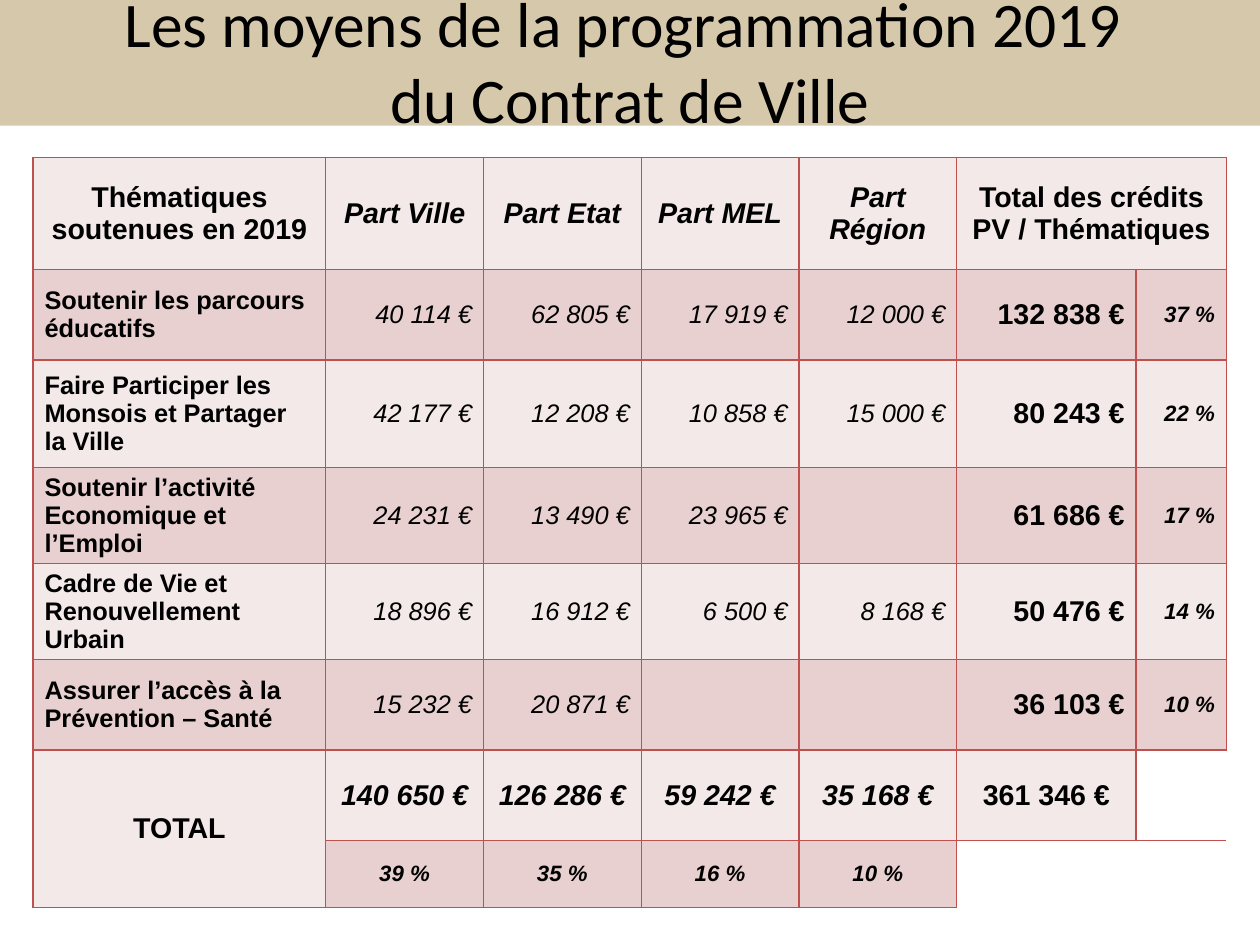
from pptx import Presentation
from pptx.dml.color import RGBColor
from pptx.enum.shapes import MSO_SHAPE as Shape
from pptx.enum.text import MSO_ANCHOR as Anchor, PP_ALIGN as Align
from pptx.oxml.ns import qn
from pptx.util import Cm, Inches, Pt
from lxml.etree import SubElement

SAND = RGBColor(0xD6, 0xC8, 0xAB)
BLACK = RGBColor(0, 0, 0)
LIGHT = RGBColor(0xF4, 0xE9, 0xE9)
ROSE = RGBColor(0xE8, 0xD0, 0xD0)
RED = RGBColor(0xC0, 0x50, 0x4D)

WIDTH = Cm(28)
HEIGHT = Cm(21)
COLUMNS = [2.56] + [1.38] * 4 + [1.57, 0.79]
ROWS = [0.98, 0.79, 0.94] + [0.79] * 4 + [0.59]

TITLE = "Les moyens de la programmation 2019 \vdu Contrat de Ville"
BUDGET = [
    ["Thématiques soutenues en 2019", "Part Ville", "Part Etat", "Part MEL",
     "Part Région", "Total des crédits PV / Thématiques", ""],
    ["Soutenir les parcours éducatifs", "40 114 €", "62 805 €", "17 919 €",
     "12 000 €", "132 838 €", "37 %"],
    ["Faire Participer les Monsois et Partager la Ville", "42 177 €", "12 208 €",
     "10 858 €", "15 000 €", "80 243 €", "22 %"],
    ["Soutenir l’activité Economique et l’Emploi", "24 231 €", "13 490 €",
     "23 965 €", "", "61 686 €", "17 %"],
    ["Cadre de Vie et Renouvellement Urbain", "18 896 €", "16 912 €", "6 500 €",
     "8 168 €", "50 476 €", "14 %"],
    ["Assurer l’accès à la Prévention – Santé", "15 232 €", "20 871 €", "", "",
     "36 103 €", "10 %"],
    ["TOTAL", "140 650 €", "126 286 €", "59 242 €", "35 168 €", "361 346 €", ""],
    ["", "39 %", "35 %", "16 %", "10 %", "", ""],
]
MERGES = [((0, 5), (0, 6)), ((6, 0), (7, 0)), ((7, 5), (7, 6))]
OPEN_CELLS = {(6, 6): "LTB", (7, 5): "LT", (7, 6): "T"}


def set_font(font, **values):
    for name, value in values.items():
        setattr(font, name, value)
    font.color.rgb = BLACK


def add_band(s):
    band = s.shapes.add_shape(Shape.RECTANGLE, 0, 0, WIDTH, int(HEIGHT * 0.133))
    band.shadow.inherit = False
    band.fill.solid()
    band.fill.fore_color.rgb = SAND
    band.line.fill.background()


def add_title(s):
    box = s.shapes.add_textbox(int(WIDTH * 0.05), 0, int(WIDTH * 0.9), int(HEIGHT * 0.128))
    tf = box.text_frame
    tf.word_wrap = True
    tf.vertical_anchor = Anchor.MIDDLE
    p = tf.paragraphs[0]
    p.alignment = Align.CENTER
    p.text = TITLE
    for r in p.runs:
        set_font(r.font, name="Calibri", size=Pt(40))


def set_borders(cell, sides):
    tc_pr = cell._tc.get_or_add_tcPr()
    for side in "LRTB":
        ln = SubElement(tc_pr, qn(f"a:ln{side}"), w=str(Pt(1)))
        if side in sides:
            fill = SubElement(ln, qn("a:solidFill"))
            SubElement(fill, qn("a:srgbClr"), val=str(RED))
        else:
            SubElement(ln, qn("a:noFill"))


def cell_format(row, col):
    if row in (0, 6):
        return Align.CENTER, dict(size=Pt(18), bold=True, italic=0 < col < 5)
    if row == 7:
        return Align.CENTER, dict(size=Pt(14), bold=True, italic=True)
    if col == 0:
        return Align.LEFT, dict(size=Pt(16), bold=True, italic=False)
    if col < 5:
        return Align.RIGHT, dict(size=Pt(16), bold=False, italic=True)
    return Align.RIGHT, dict(size=Pt(18 if col == 5 else 14), bold=True, italic=col == 6)


def fill_cell(cell, row, col, text):
    cell.vertical_anchor = Anchor.MIDDLE
    set_borders(cell, OPEN_CELLS.get((row, col), "LRTB"))
    if (row, col) in OPEN_CELLS:
        cell.fill.background()
    else:
        cell.fill.solid()
        cell.fill.fore_color.rgb = ROSE if row % 2 else LIGHT
    if text:
        p = cell.text_frame.paragraphs[0]
        p.alignment, values = cell_format(row, col)
        r = p.add_run()
        r.text = text
        set_font(r.font, name="Arial", **values)


def add_budget(s):
    frame = s.shapes.add_table(len(ROWS), len(COLUMNS), Inches(0.29), Inches(1.38),
                               Inches(sum(COLUMNS)), Inches(sum(ROWS)))
    table = frame.table
    table.first_row = False
    table.horz_banding = False
    for column, width in zip(table.columns, COLUMNS):
        column.width = Inches(width)
    for line, height in zip(table.rows, ROWS):
        line.height = Inches(height)
    for row, texts in enumerate(BUDGET):
        for col, text in enumerate(texts):
            fill_cell(table.cell(row, col), row, col, text)
    for first, last in MERGES:
        table.cell(*first).merge(table.cell(*last))


def main():
    prs = Presentation()
    prs.slide_width = WIDTH
    prs.slide_height = HEIGHT
    s = prs.slides.add_slide(prs.slide_layouts[6])
    add_band(s)
    add_budget(s)
    add_title(s)
    prs.save("out.pptx")


if __name__ == "__main__":
    main()
